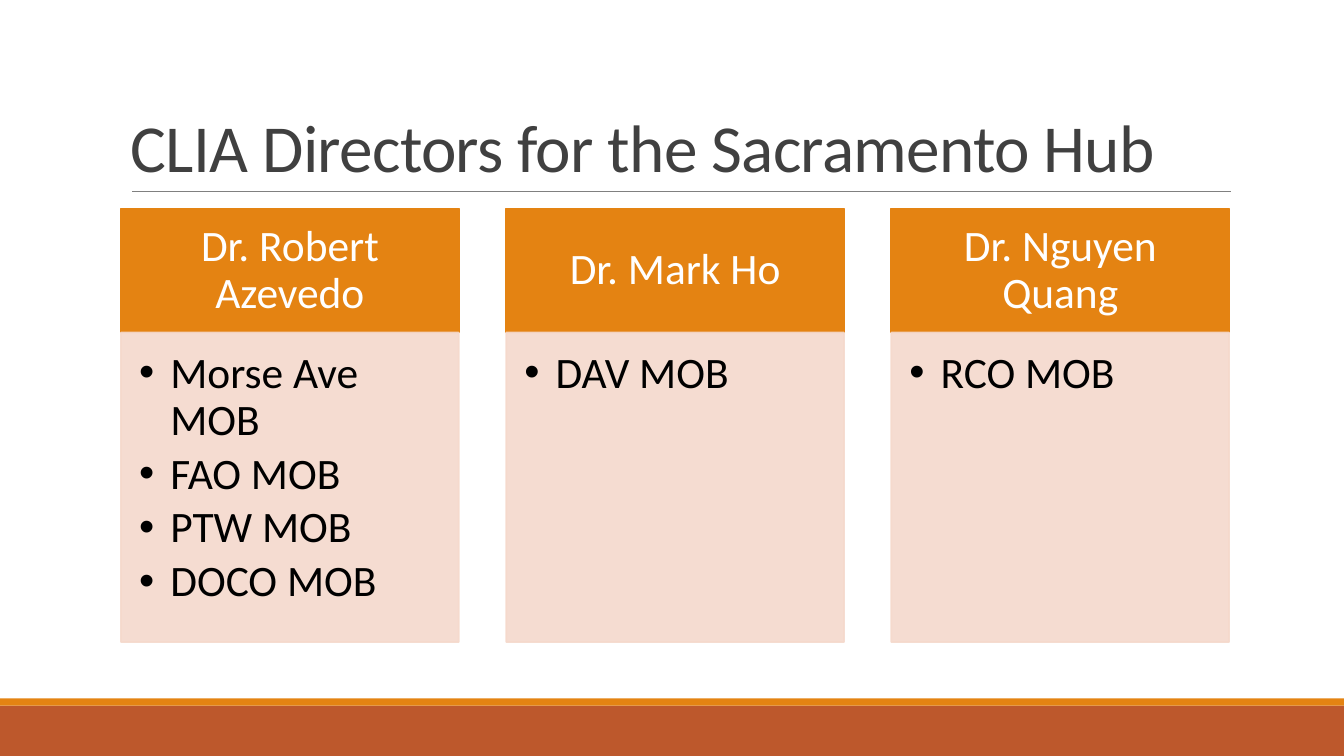
"""Build the slide that lists the CLIA directors of the Sacramento hub."""
import dataclasses
import typing

import lxml.etree
import pptx
import pptx.dml.color
import pptx.enum.shapes
import pptx.enum.text
import pptx.oxml.ns
import pptx.util

ORANGE = pptx.dml.color.RGBColor(0xE4, 0x83, 0x12)
RUST = pptx.dml.color.RGBColor(0xBD, 0x58, 0x2C)
PEACH = pptx.dml.color.RGBColor(0xF5, 0xD9, 0xCC)
WHITE = pptx.dml.color.RGBColor(0xFF, 0xFF, 0xFF)
BLACK = pptx.dml.color.RGBColor(0x00, 0x00, 0x00)
CHARCOAL = pptx.dml.color.RGBColor(0x40, 0x40, 0x40)
GREY = pptx.dml.color.RGBColor(0x80, 0x80, 0x80)

SLIDE_WIDTH, SLIDE_HEIGHT = 13.33, 7.5
GRID_LEFT, COLUMN_WIDTH, COLUMN_PITCH = 1.2, 3.35, 3.82
HEADER_TOP, HEADER_HEIGHT, BODY_HEIGHT = 2.07, 1.23, 3.07
FOOTER_HEIGHT, STRIPE_HEIGHT = 0.5, 0.07
BULLET_INDENT = 0.31


class Box(typing.NamedTuple):
    left: float
    top: float
    width: float
    height: float

    def lengths(self) -> list[int]:
        return [pptx.util.Inches(value) for value in self]


@dataclasses.dataclass(frozen=True)
class Director:
    name: str
    sites: tuple[str, ...]


DIRECTORS = (
    Director("Dr. Robert Azevedo", ("Morse Ave MOB", "FAO MOB", "PTW MOB", "DOCO MOB")),
    Director("Dr. Mark Ho", ("DAV MOB",)),
    Director("Dr. Nguyen Quang", ("RCO MOB",)),
)


def add_child(parent, tag: str, **attributes: str):
    child = lxml.etree.SubElement(parent, pptx.oxml.ns.qn(tag))
    for name, value in attributes.items():
        child.set(name, value)
    return child


def add_panel(slide, box: Box, color, outlined: bool = False, opacity: int = 100):
    shape = slide.shapes.add_shape(pptx.enum.shapes.MSO_SHAPE.RECTANGLE, *box.lengths())
    shape.shadow.inherit = False
    shape.fill.solid()
    shape.fill.fore_color.rgb = color
    if outlined:
        shape.line.color.rgb = color
        shape.line.width = pptx.util.Pt(1.25)
    else:
        shape.line.fill.background()
    if opacity < 100:
        for color_element in shape._element.spPr.iter(pptx.oxml.ns.qn("a:srgbClr")):
            add_child(color_element, "a:alpha", val=str(opacity * 1000))
    return shape


def write_text(shape, lines: typing.Sequence[str], *, size: float, color,
               align=pptx.enum.text.PP_ALIGN.LEFT, anchor=pptx.enum.text.MSO_ANCHOR.TOP,
               insets: tuple[float, float, float, float] = (0.1, 0.05, 0.1, 0.05),
               line_spacing: float = 0.9, space_after: float = 0,
               bulleted: bool = False, tracking: int = 0) -> None:
    frame = shape.text_frame
    frame.word_wrap = True
    frame.vertical_anchor = anchor
    (frame.margin_left, frame.margin_top, frame.margin_right,
     frame.margin_bottom) = map(pptx.util.Inches, insets)
    for index, line in enumerate(lines):
        paragraph = frame.add_paragraph() if index else frame.paragraphs[0]
        paragraph.alignment = align
        paragraph.line_spacing = line_spacing
        paragraph.space_after = pptx.util.Pt(space_after)
        if bulleted:
            properties = paragraph._p.get_or_add_pPr()
            properties.set("marL", str(pptx.util.Inches(BULLET_INDENT)))
            properties.set("indent", str(-pptx.util.Inches(BULLET_INDENT)))
            add_child(properties, "a:buFont", typeface="Arial")
            add_child(properties, "a:buChar", char="•")
        run = paragraph.add_run()
        run.text = line
        run.font.name = "Calibri"
        run.font.size = pptx.util.Pt(size)
        run.font.color.rgb = color
        if tracking:
            run._r.get_or_add_rPr().set("spc", str(tracking))


def add_footer(slide) -> None:
    footer_top = SLIDE_HEIGHT - FOOTER_HEIGHT
    add_panel(slide, Box(0, footer_top, SLIDE_WIDTH, FOOTER_HEIGHT), RUST)
    add_panel(slide, Box(0, footer_top - STRIPE_HEIGHT, SLIDE_WIDTH, STRIPE_HEIGHT), ORANGE)


def add_title(slide, title: str) -> None:
    rule = slide.shapes.add_connector(
        pptx.enum.shapes.MSO_CONNECTOR.STRAIGHT,
        *Box(1.31, 1.9, 12.21, 1.9).lengths())
    rule.line.color.rgb = GREY
    rule.line.width = pptx.util.Pt(0.5)
    add_child(rule._element.spPr, "a:effectLst")
    title_box = slide.shapes.add_textbox(*Box(GRID_LEFT, 0.31, 11, 1.59).lengths())
    write_text(title_box, [title], size=48, color=CHARCOAL, line_spacing=0.85,
               anchor=pptx.enum.text.MSO_ANCHOR.BOTTOM, tracking=-50)


def add_director(slide, column: int, director: Director) -> None:
    left = GRID_LEFT + column * COLUMN_PITCH
    header = add_panel(slide, Box(left, HEADER_TOP, COLUMN_WIDTH, HEADER_HEIGHT),
                       ORANGE, outlined=True)
    write_text(header, [director.name], size=31, color=WHITE,
               align=pptx.enum.text.PP_ALIGN.CENTER,
               anchor=pptx.enum.text.MSO_ANCHOR.MIDDLE,
               insets=(0.24, 0.14, 0.24, 0.14))
    body = add_panel(slide, Box(left, HEADER_TOP + HEADER_HEIGHT, COLUMN_WIDTH, BODY_HEIGHT),
                     PEACH, outlined=True, opacity=90)
    write_text(body, director.sites, size=31, color=BLACK,
               insets=(0.18, 0.18, 0.24, 0.27), space_after=5, bulleted=True)


def main() -> None:
    presentation = pptx.Presentation()
    presentation.slide_width = pptx.util.Inches(SLIDE_WIDTH)
    presentation.slide_height = pptx.util.Inches(SLIDE_HEIGHT)
    slide = presentation.slides.add_slide(presentation.slide_layouts[6])
    add_footer(slide)
    add_title(slide, "CLIA Directors for the Sacramento Hub")
    for column, director in enumerate(DIRECTORS):
        add_director(slide, column, director)
    presentation.save("out.pptx")


if __name__ == "__main__":
    main()
